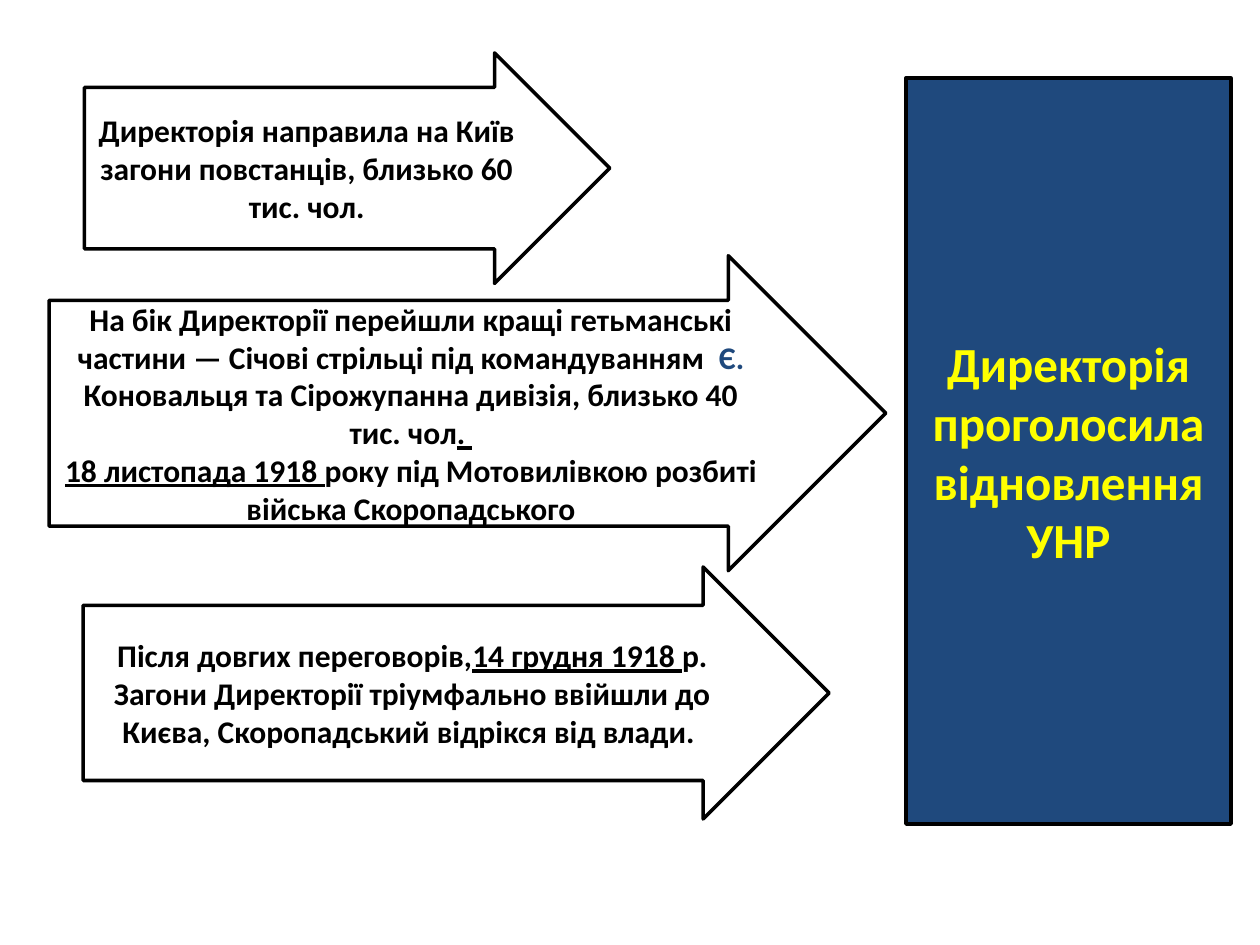
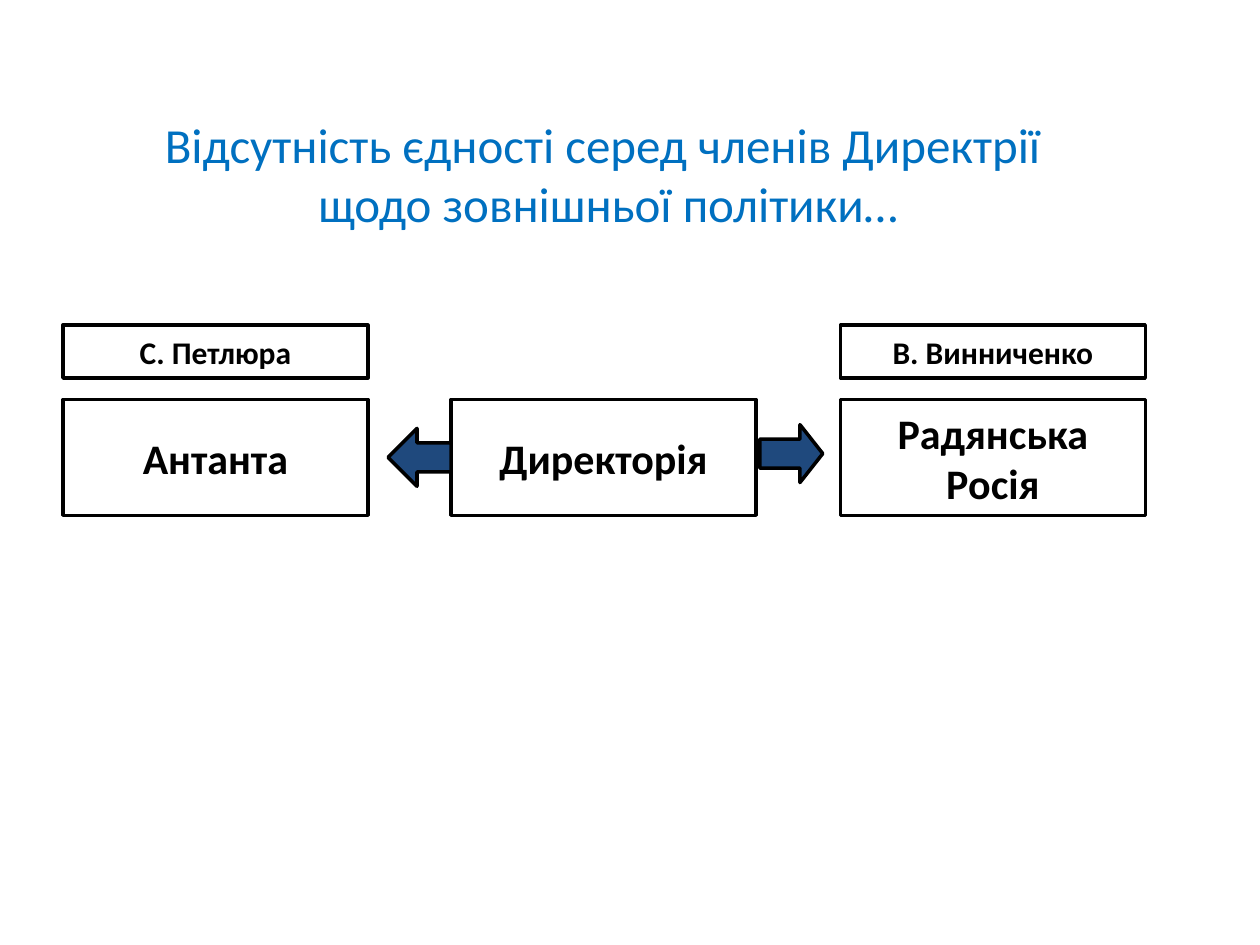
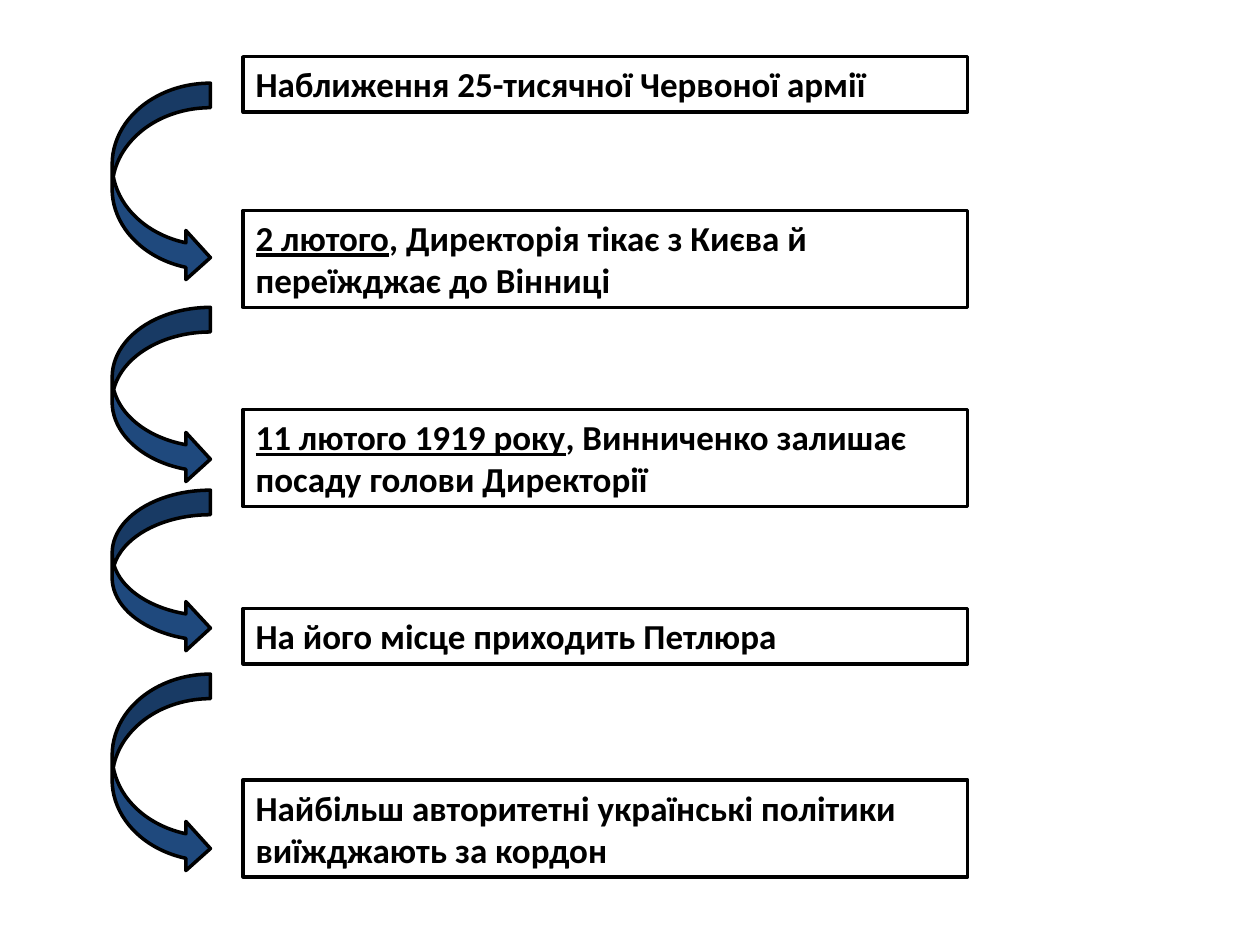
from dataclasses import dataclass

from pptx import Presentation
from pptx.dml.color import RGBColor
from pptx.enum.shapes import MSO_SHAPE
from pptx.enum.text import MSO_ANCHOR, MSO_AUTO_SIZE, PP_ALIGN
from pptx.shapes.autoshape import Shape
from pptx.slide import Slide
from pptx.text.text import TextFrame
from pptx.util import Inches, Pt

WHITE = RGBColor(0xFF, 0xFF, 0xFF)
BLACK = RGBColor(0x00, 0x00, 0x00)
NAVY = RGBColor(0x1F, 0x49, 0x7D)
YELLOW = RGBColor(0xFF, 0xFF, 0x00)
BLUE = RGBColor(0x00, 0x70, 0xC0)
FONT = "Calibri"


@dataclass(frozen=True)
class Run:
    text: str
    underline: bool = False
    color: RGBColor | None = None


@dataclass(frozen=True)
class Style:
    size: int
    color: RGBColor = BLACK
    bold: bool = True
    align: PP_ALIGN = PP_ALIGN.CENTER


@dataclass(frozen=True)
class Box:
    left: float
    top: float
    width: float
    height: float


Paragraphs = list[list[Run]]


@dataclass(frozen=True)
class EventArrow:
    box: Box
    shaft: float
    text: Paragraphs


@dataclass(frozen=True)
class Step:
    top: float
    height: float
    runs: list[Run]


EVENT = Style(18)
RESULT = Style(28, YELLOW)
TITLE = Style(28, BLUE, bold=False)
SIDE = Style(24)
LEADER = Style(18)
STEP = Style(20, align=PP_ALIGN.LEFT)

EVENT_ARROWS = [
    EventArrow(Box(0.67, 0.42, 4.17, 1.83), 0.7, [
        [Run("Директорія направила на Київ загони повстанців, близько 60 тис. чол.")],
    ]),
    EventArrow(Box(0.39, 2.03, 6.64, 2.5), 0.717, [
        [Run("На бік Директорії перейшли кращі гетьманські частини — "
             "Січові стрільці під командуванням  "),
         Run("Є. ", color=NAVY),
         Run("Коновальця та Сірожупанна дивізія, близько 40 тис. чол"),
         Run(". ", underline=True)],
        [Run("18 листопада 1918 ", underline=True),
         Run("року під Мотовилівкою розбиті війська Скоропадського")],
    ]),
    EventArrow(Box(0.66, 4.5, 5.92, 2), 0.695, [
        [Run("Після довгих переговорів,"),
         Run("14 грудня 1918 ", underline=True),
         Run("р. Загони Директорії тріумфально ввійшли до Києва, "
             "Скоропадський відрікся від влади. ")],
    ]),
]

STEPS = [
    Step(0.45, 0.44, [Run("Наближення 25-тисячної Червоної армії")]),
    Step(1.67, 0.77, [Run("2 лютого", underline=True),
                      Run(", Директорія тікає з Києва й переїжджає до Вінниці")]),
    Step(3.25, 0.77, [Run("11 лютого 1919 року", underline=True),
                      Run(", Винниченко залишає посаду голови Директорії")]),
    Step(4.83, 0.44, [Run("На його місце приходить Петлюра")]),
    Step(6.19, 0.77, [Run("Найбільш авторитетні українські політики виїжджають за кордон")]),
]
STEP_ARROWS = [(0.66, 1.58), (2.44, 1.4), (3.89, 1.29), (5.35, 1.58)]  # top, height


def inches(box: Box) -> tuple[Inches, Inches, Inches, Inches]:
    return Inches(box.left), Inches(box.top), Inches(box.width), Inches(box.height)


def write(tf: TextFrame, paragraphs: Paragraphs, style: Style) -> None:
    for i, runs in enumerate(paragraphs):
        p = tf.paragraphs[0] if i == 0 else tf.add_paragraph()
        p.alignment = style.align
        for run in runs:
            r = p.add_run()
            r.text = run.text
            r.font.name = FONT
            r.font.size = Pt(style.size)
            r.font.bold = style.bold
            r.font.underline = run.underline
            r.font.color.rgb = run.color or style.color


def add_outlined(s: Slide, kind: MSO_SHAPE, box: Box, fill: RGBColor,
                 adjustments: tuple[float, ...] = ()) -> Shape:
    """Add a preset shape with the black outline used on every slide."""
    sp = s.shapes.add_shape(kind, *inches(box))
    sp.shadow.inherit = False
    sp.fill.solid()
    sp.fill.fore_color.rgb = fill
    sp.line.color.rgb = BLACK
    sp.line.width = Pt(2)
    for i, value in enumerate(adjustments):
        sp.adjustments[i] = value
    return sp


def add_label(s: Slide, box: Box, paragraphs: Paragraphs, style: Style,
              fill: RGBColor = WHITE, kind: MSO_SHAPE = MSO_SHAPE.RECTANGLE,
              adjustments: tuple[float, ...] = ()) -> Shape:
    """Add an outlined shape with text centred vertically."""
    sp = add_outlined(s, kind, box, fill, adjustments)
    tf = sp.text_frame
    tf.word_wrap = True
    tf.vertical_anchor = MSO_ANCHOR.MIDDLE
    write(tf, paragraphs, style)
    return sp


def build_uprising(s: Slide) -> None:
    for arrow in EVENT_ARROWS:
        add_label(s, arrow.box, arrow.text, EVENT, kind=MSO_SHAPE.RIGHT_ARROW,
                  adjustments=(arrow.shaft, 0.5))
    add_label(s, Box(7.19, 0.62, 2.58, 5.92),
              [[Run("Директорія проголосила відновлення УНР")]], RESULT, NAVY)


def build_foreign_policy(s: Slide) -> None:
    left, center, right = 0.5, 3.58, 6.67
    width = 2.42
    for x, text in ((center, "Директорія"), (left, "Антанта"), (right, "Радянська Росія")):
        add_label(s, Box(x, 3.17, width, 0.92), [[Run(text)]], SIDE)
    for x, text in ((right, "В. Винниченко"), (left, "С. Петлюра")):
        add_label(s, Box(x, 2.58, width, 0.42), [[Run(text)]], LEADER)

    add_outlined(s, MSO_SHAPE.LEFT_ARROW, Box(3.08, 3.4, 0.5, 0.46), NAVY)
    to_right = add_outlined(s, MSO_SHAPE.LEFT_ARROW, Box(6.03, 3.37, 0.5, 0.46),
                            NAVY, (0.5, 0.394))
    to_right.rotation = 180

    title = s.shapes.add_textbox(*inches(Box(1.17, 0.86, 7.31, 1.04)))
    tf = title.text_frame
    tf.word_wrap = False
    tf.auto_size = MSO_AUTO_SIZE.SHAPE_TO_FIT_TEXT
    write(tf, [[Run("Відсутність єдності серед членів Директрії ")],
               [Run("щодо зовнішньої політики…")]], TITLE)


def build_retreat(s: Slide) -> None:
    for step in STEPS:
        sp = add_label(s, Box(1.93, step.top, 5.75, step.height), [step.runs], STEP)
        sp.text_frame.vertical_anchor = MSO_ANCHOR.TOP
        sp.text_frame.auto_size = MSO_AUTO_SIZE.SHAPE_TO_FIT_TEXT
    for top, height in STEP_ARROWS:
        add_outlined(s, MSO_SHAPE.CURVED_RIGHT_ARROW, Box(0.89, top, 0.78, height), NAVY)


def main() -> None:
    prs = Presentation()
    prs.slide_width = Inches(10)
    prs.slide_height = Inches(7.5)
    for build in (build_uprising, build_foreign_policy, build_retreat):
        build(prs.slides.add_slide(prs.slide_layouts[6]))
    prs.save("out.pptx")


if __name__ == "__main__":
    main()
